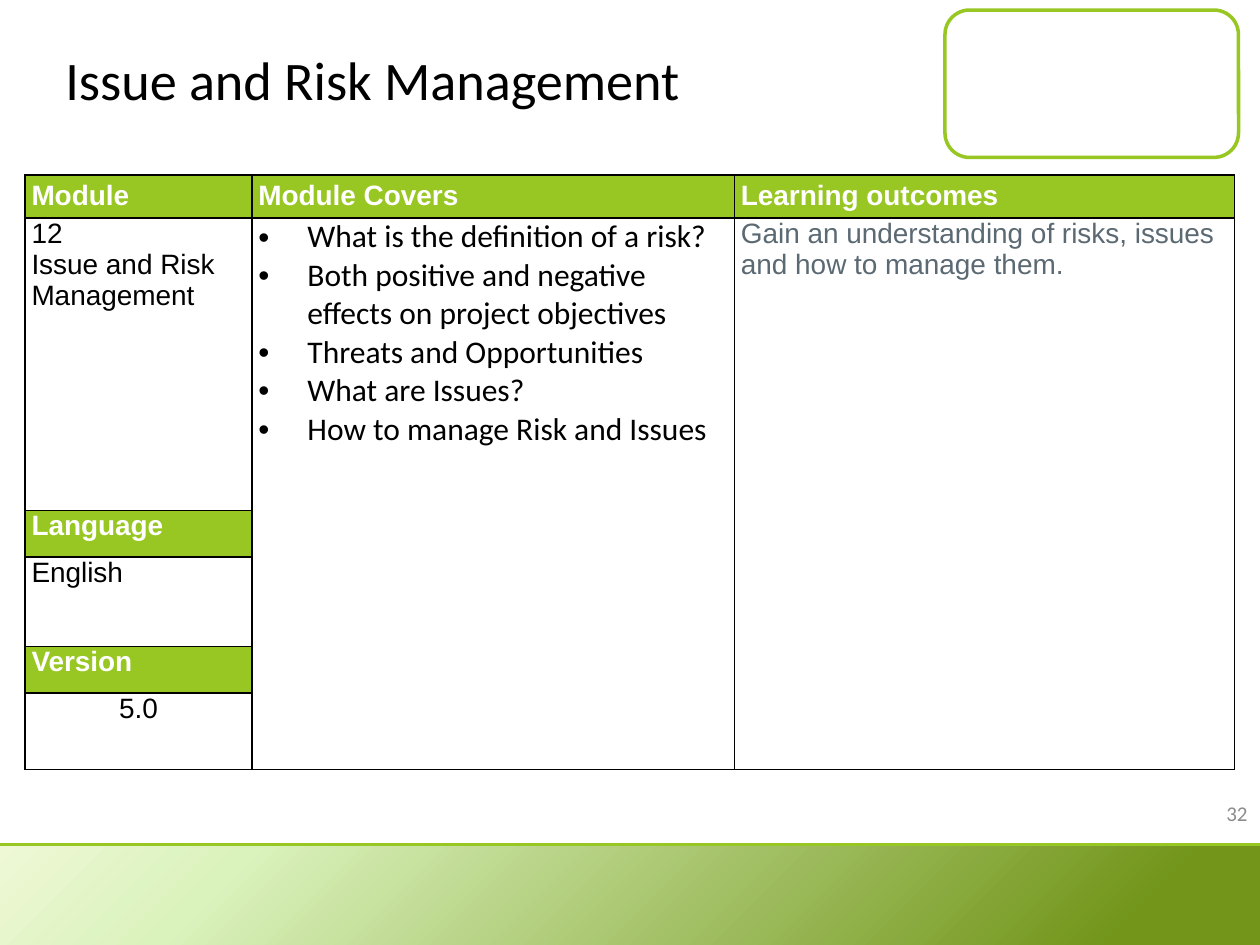
from lxml import etree
from pptx import Presentation
from pptx import util as u
from pptx.dml.color import RGBColor
from pptx.enum import shapes, text
from pptx.oxml.ns import qn
from pptx.util import Inches

COLORS = {"green": "98C723", "white": "FFFFFF", "black": "000000",
          "slate": "5B6973", "number": "8C8C8C"}
FOOTER_STOPS = [(0, "EEF8D5"), (19, "DAF2BC"), (89, "72951A")]
COLUMNS = [1.8, 3.83, 3.97]
ROWS = [0.34, 2.32, 0.37, 0.71, 0.37, 0.61]
HEADINGS = ["Module", "Module Covers", "Learning outcomes"]
COVERS = ["What is the definition of a risk?",
          "Both positive and negative effects on project objectives",
          "Threats and Opportunities",
          "What are Issues?",
          "How to manage Risk and Issues"]
OUTCOME = "Gain an understanding of risks, issues and how to manage them."


def rgb(name):
    return RGBColor.from_string(COLORS[name])


def add_xml(parent, tag, **attributes):
    return etree.SubElement(parent, qn(tag), attributes)


def style(paragraph, size, color, font="Arial", bold=False):
    for run in paragraph.runs:
        run.font.size = u.Pt(size)
        run.font.name = font
        run.font.bold = bold
        run.font.color.rgb = rgb(color)


def add_label(slide, box, words, size, color, align):
    frame = slide.shapes.add_textbox(*map(Inches, box)).text_frame
    frame.word_wrap = True
    frame.vertical_anchor = text.MSO_ANCHOR.MIDDLE
    frame.text = words
    frame.paragraphs[0].alignment = align
    style(frame.paragraphs[0], size, color, "Calibri")


def add_logo_frame(slide, box):
    frame = slide.shapes.add_shape(shapes.MSO_SHAPE.ROUNDED_RECTANGLE,
                                   *map(Inches, box))
    frame.shadow.inherit = False
    frame.fill.solid()
    frame.fill.fore_color.rgb = rgb("white")
    frame.line.color.rgb = rgb("green")
    frame.line.width = u.Pt(2)


def add_footer(slide, box):
    """Gradient band with a green rule along its top edge."""
    left, top, width, height = map(Inches, box)
    band = slide.shapes.add_shape(shapes.MSO_SHAPE.RECTANGLE,
                                  left, top, width, height)
    band.shadow.inherit = False
    band.line.fill.background()
    band.fill.gradient()
    band.fill.gradient_angle = 315
    stops = band.fill._fill._gradFill.find(qn("a:gsLst"))
    for stop in list(stops):
        stops.remove(stop)
    for position, color in FOOTER_STOPS:
        stop = add_xml(stops, "a:gs", pos=str(position * 1000))
        add_xml(stop, "a:srgbClr", val=color)

    rule = slide.shapes.add_connector(shapes.MSO_CONNECTOR.STRAIGHT,
                                      left, top, left + width, top)
    rule.line.color.rgb = rgb("green")
    rule.line.width = u.Pt(1.5)
    add_xml(rule._element.spPr, "a:effectLst")


def add_borders(cell):
    properties = cell._tc.get_or_add_tcPr()
    for side in ("a:lnL", "a:lnR", "a:lnT", "a:lnB"):
        border = add_xml(properties, side, w=str(u.Pt(1)))
        add_xml(add_xml(border, "a:solidFill"), "a:srgbClr",
                val=COLORS["black"])


def prepare_cell(cell):
    add_borders(cell)
    cell.fill.background()
    cell.margin_left = cell.margin_right = Inches(0.05)
    cell.margin_top = cell.margin_bottom = 0


def fill_cell(cell, lines, size=16, color="black", font="Arial", bold=False):
    cell.text_frame.text = "\n".join(lines)
    for paragraph in cell.text_frame.paragraphs:
        style(paragraph, size, color, font, bold)


def fill_heading(cell, words):
    cell.fill.solid()
    cell.fill.fore_color.rgb = rgb("green")
    fill_cell(cell, [words], color="white", bold=True)


def add_bullets(cell):
    for paragraph in cell.text_frame.paragraphs:
        properties = paragraph._p.get_or_add_pPr()
        properties.set("marL", str(Inches(0.39)))
        properties.set("indent", str(-Inches(0.39)))
        add_xml(properties, "a:buFont", typeface="Arial")
        add_xml(properties, "a:buChar", char="•")


def add_module_table(slide, box):
    table = slide.shapes.add_table(len(ROWS), len(COLUMNS),
                                   *map(Inches, box)).table
    table.first_row = table.horz_banding = False
    for column, width in zip(table.columns, COLUMNS):
        column.width = Inches(width)
    for row, height in zip(table.rows, ROWS):
        row.height = Inches(height)
    for cell in table.iter_cells():
        prepare_cell(cell)
    for column in (1, 2):
        table.cell(1, column).merge(table.cell(len(ROWS) - 1, column))

    for column, heading in enumerate(HEADINGS):
        cell = table.cell(0, column)
        fill_heading(cell, heading)
        cell.text_frame.paragraphs[0].line_spacing = 1.15
    fill_heading(table.cell(2, 0), "Language")
    fill_heading(table.cell(4, 0), "Version")

    fill_cell(table.cell(1, 0), ["12", "Issue and Risk Management"])
    fill_cell(table.cell(3, 0), ["English"])
    version = table.cell(5, 0)
    fill_cell(version, ["5.0"])
    version.text_frame.paragraphs[0].alignment = text.PP_ALIGN.CENTER
    covers = table.cell(1, 1)
    fill_cell(covers, COVERS, size=18, font="Calibri")
    add_bullets(covers)
    fill_cell(table.cell(1, 2), [OUTCOME], color="slate")


def main():
    deck = Presentation()
    deck.slide_width, deck.slide_height = Inches(10), Inches(7.5)
    slide = deck.slides.add_slide(deck.slide_layouts[6])
    add_logo_frame(slide, (7.5, 0.08, 2.33, 1.17))
    add_footer(slide, (0, 6.7, 10, 0.82))
    add_label(slide, (0.42, 0, 6.75, 1.25), "Issue and Risk Management",
              31, "black", text.PP_ALIGN.LEFT)
    add_label(slide, (7.67, 6.25, 2.33, 0.4), "32",
              12, "number", text.PP_ALIGN.RIGHT)
    add_module_table(slide, (0.2, 1.39, 9.6, 4.72))
    deck.save("out.pptx")


if __name__ == "__main__":
    main()
